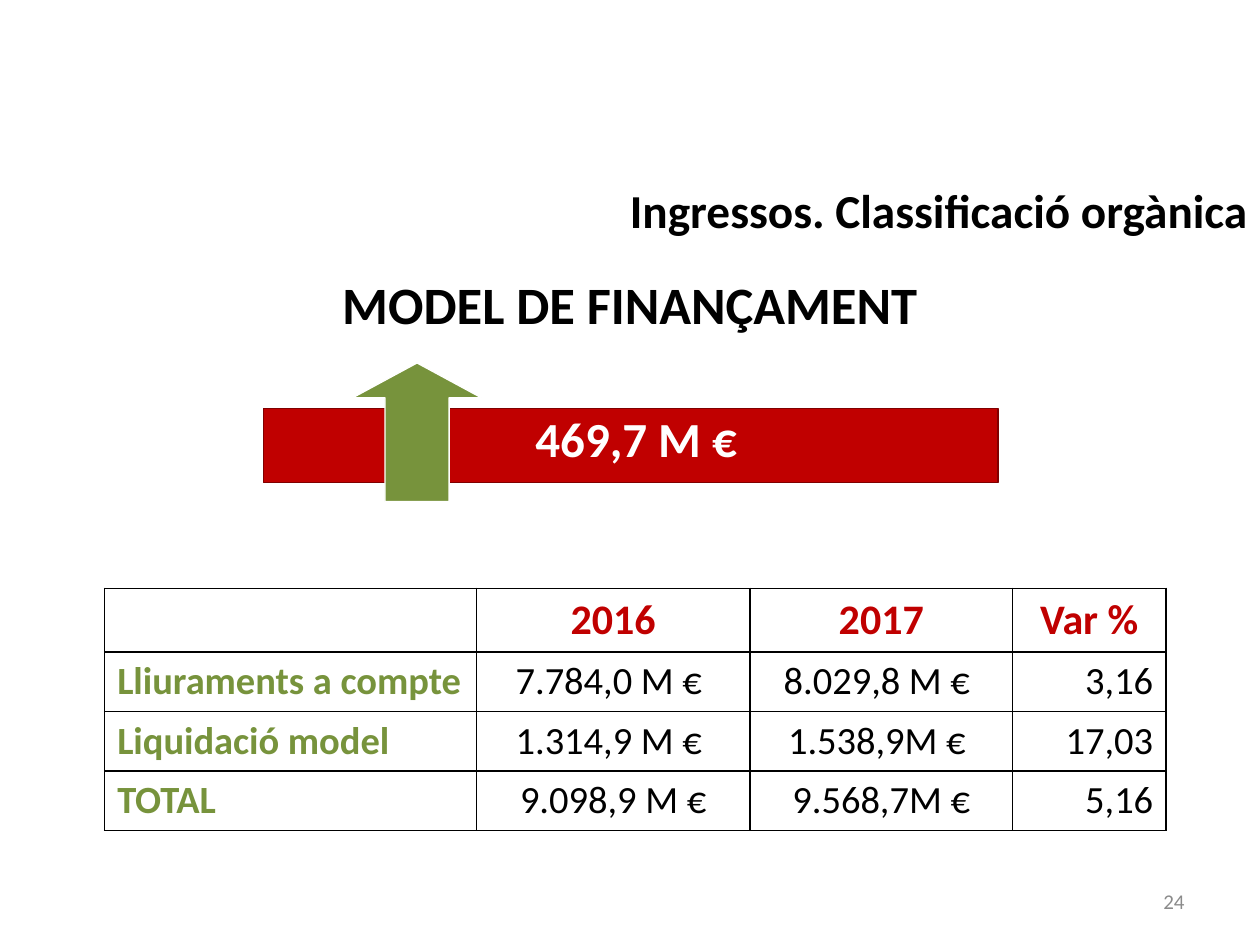
from dataclasses import dataclass

from lxml.etree import SubElement
from pptx import Presentation
from pptx.dml.color import RGBColor
from pptx.enum.shapes import MSO_SHAPE
from pptx.enum.text import MSO_ANCHOR, PP_ALIGN
from pptx.oxml.ns import qn
from pptx.util import Pt

BLACK = RGBColor(0x00, 0x00, 0x00)
WHITE = RGBColor(0xFF, 0xFF, 0xFF)
GREY = RGBColor(0x8B, 0x8B, 0x8B)
RED = RGBColor(0xC0, 0x00, 0x00)
DARK_RED = RGBColor(0x80, 0x00, 0x00)
GREEN = RGBColor(0x77, 0x93, 0x3C)


@dataclass(frozen=True)
class Area:
    left: float
    top: float
    width: float
    height: float

    def lengths(self) -> tuple:
        return Pt(self.left), Pt(self.top), Pt(self.width), Pt(self.height)


@dataclass(frozen=True)
class Style:
    size: float
    color: RGBColor
    bold: bool = False
    align: PP_ALIGN = PP_ALIGN.LEFT


HEADING = Style(30, BLACK, True, PP_ALIGN.CENTER)
SECTION = Style(27, BLACK, True, PP_ALIGN.RIGHT)
PAGE_NUMBER = Style(12, GREY, align=PP_ALIGN.RIGHT)
BANNER = Style(28, WHITE, True, PP_ALIGN.CENTER)
COLUMN_HEAD = Style(24, RED, True, PP_ALIGN.CENTER)
ROW_HEAD = Style(22, GREEN, True)
AMOUNT = Style(22, BLACK, align=PP_ALIGN.CENTER)
VARIATION = Style(22, BLACK, align=PP_ALIGN.RIGHT)
BODY_STYLES = (ROW_HEAD, AMOUNT, AMOUNT, VARIATION)

COLUMN_WIDTHS = (212.4, 156.4, 150, 87.6)
ROW_HEIGHTS = (36.4, 34, 34, 34)
TABLE_ROWS = (
    ("", "2016", "2017", "Var %"),
    ("Lliuraments a compte", "7.784,0 M € ", "8.029,8 M € ", "3,16"),
    ("Liquidació model", "1.314,9 M € ", "1.538,9M € ", "17,03"),
    ("TOTAL", "9.098,9 M €", "9.568,7M €", "5,16"),
)


def write(frame, text: str, style: Style):
    """Put one styled paragraph in a text frame."""
    para = frame.paragraphs[0]
    para.text = text
    para.alignment = style.align
    font = para.font
    font.name = "Calibri"
    font.size = Pt(style.size)
    font.bold = style.bold
    font.color.rgb = style.color
    return para


def add_text(page, area: Area, text: str, style: Style, anchor: MSO_ANCHOR) -> None:
    frame = page.shapes.add_textbox(*area.lengths()).text_frame
    frame.word_wrap = True
    frame.vertical_anchor = anchor
    write(frame, text, style)


def add_block(page, kind: MSO_SHAPE, area: Area, fill: RGBColor, line: RGBColor):
    block = page.shapes.add_shape(kind, *area.lengths())
    block.shadow.inherit = False
    block.fill.solid()
    block.fill.fore_color.rgb = fill
    block.line.color.rgb = line
    block.line.width = Pt(0.75)
    return block


def outline_cell(cell) -> None:
    properties = cell._tc.get_or_add_tcPr()
    for side in ("a:lnL", "a:lnR", "a:lnT", "a:lnB"):
        border = SubElement(properties, qn(side), w=str(Pt(1)))
        fill = SubElement(border, qn("a:solidFill"))
        SubElement(fill, qn("a:srgbClr"), val=str(BLACK))


def add_figures(page, area: Area) -> None:
    table = page.shapes.add_table(
        len(ROW_HEIGHTS), len(COLUMN_WIDTHS), *area.lengths()
    ).table
    table.first_row = table.horz_banding = False
    for column, width in zip(table.columns, COLUMN_WIDTHS):
        column.width = Pt(width)
    for index, (row, height, texts) in enumerate(
        zip(table.rows, ROW_HEIGHTS, TABLE_ROWS)
    ):
        row.height = Pt(height)
        styles = BODY_STYLES if index else (COLUMN_HEAD,) * len(texts)
        for cell, text, style in zip(row.cells, texts, styles):
            outline_cell(cell)
            cell.fill.background()
            cell.vertical_anchor = MSO_ANCHOR.MIDDLE
            if text:
                write(cell.text_frame, text, style)


def main() -> None:
    deck = Presentation()
    deck.slide_width, deck.slide_height = Pt(720), Pt(540)
    page = deck.slides.add_slide(deck.slide_layouts[5])

    # Headings and page number
    title = page.shapes.title
    title.left, title.top, title.width, title.height = Area(
        54, 150.5, 612, 45.4
    ).lengths()
    title.text_frame.vertical_anchor = MSO_ANCHOR.MIDDLE
    write(title.text_frame, "MODEL DE FINANÇAMENT", HEADING)
    add_text(page, Area(516, 500.5, 168, 28.8), "24", PAGE_NUMBER, MSO_ANCHOR.MIDDLE)
    add_text(page, Area(300.2, 100, 419.8, 39.6), "Ingressos. Classificació orgànica",
             SECTION, MSO_ANCHOR.TOP)

    # Increase banner with its arrow
    banner = add_block(page, MSO_SHAPE.RECTANGLE, Area(150.5, 233.3, 419.8, 42.5),
                       RED, DARK_RED)
    banner.text_frame.vertical_anchor = MSO_ANCHOR.MIDDLE
    write(banner.text_frame, " 469,7 M €", BANNER).line_spacing = 0.7
    arrow = add_block(page, MSO_SHAPE.DOWN_ARROW, Area(201.6, 207.4, 73.4, 79.2),
                      GREEN, WHITE)
    arrow.rotation = 180
    arrow.adjustments[0] = 0.5
    arrow.adjustments[1] = 0.27

    # Comparison of both years
    add_figures(page, Area(59.8, 336.2, sum(COLUMN_WIDTHS), sum(ROW_HEIGHTS)))

    deck.save("out.pptx")


if __name__ == "__main__":
    main()
